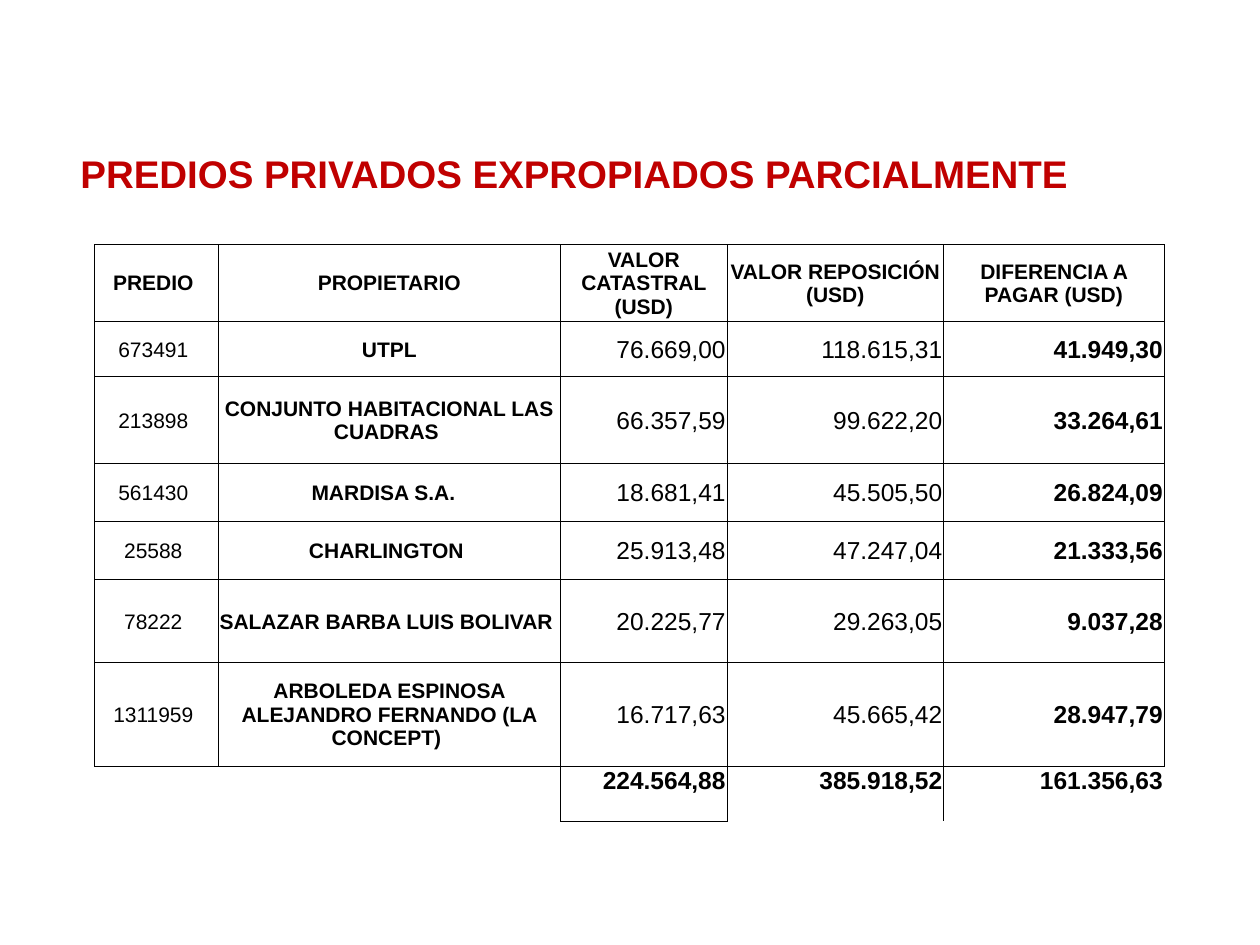
from dataclasses import dataclass

from lxml.etree import SubElement
from pptx import Presentation
from pptx.dml.color import RGBColor as RGB
from pptx.enum.text import MSO_ANCHOR as Anchor, PP_ALIGN as Align
from pptx.oxml.ns import qn
from pptx.util import Inches, Pt


@dataclass(frozen=True)
class Theme:
    font: str = "Arial"
    title: RGB = RGB(0xC0, 0, 0)
    text: RGB = RGB(0, 0, 0)
    cell: RGB = RGB(0xFF, 0xFF, 0xFF)
    border: str = "000000"
    title_size: Pt = Pt(22)
    label_size: Pt = Pt(12)
    amount_size: Pt = Pt(14)
    border_width: Pt = Pt(0.5)


theme = Theme()
PLAIN_STYLE = "{2D5ABB26-0587-4C30-8999-92F81FD0307C}"  # no style, no grid


def set_font(p, size, bold, color):
    p.font.name, p.font.size, p.font.bold = theme.font, size, bold
    p.font.color.rgb = color


def add_borders(cell, sides):
    tc_pr = cell._tc.get_or_add_tcPr()
    for i, side in enumerate(sides):
        ln = SubElement(tc_pr, qn(f"a:ln{side}"), w=str(theme.border_width))
        fill = SubElement(ln, qn("a:solidFill"))
        SubElement(fill, qn("a:srgbClr"), val=theme.border)
        tc_pr.insert(i, ln)


prs = Presentation()
prs.slide_width, prs.slide_height = Inches(10), Inches(7.5)
s = prs.slides.add_slide(prs.slide_layouts[6])

# Title
box = s.shapes.add_textbox(Inches(0.54), Inches(1.09), Inches(8.42), Inches(0.62))
tf = box.text_frame
tf.word_wrap = True
tf.vertical_anchor = Anchor.MIDDLE
p = tf.paragraphs[0]
p.text = "PREDIOS PRIVADOS EXPROPIADOS PARCIALMENTE"
p.line_spacing = 0.9
set_font(p, theme.title_size, True, theme.title)

# Table contents: header, properties, totals
rows = [
    ("PREDIO ", "PROPIETARIO", "VALOR CATASTRAL (USD)", "VALOR REPOSICIÓN (USD)",
     "DIFERENCIA A PAGAR (USD)"),
    ("673491 ", "UTPL", "76.669,00", "118.615,31", "41.949,30"),
    ("213898 ", "CONJUNTO HABITACIONAL LAS CUADRAS ", "66.357,59", "99.622,20", "33.264,61"),
    ("561430 ", "MARDISA S.A.  ", "18.681,41", "45.505,50", "26.824,09"),
    ("25588 ", "CHARLINGTON ", "25.913,48", "47.247,04", "21.333,56"),
    ("78222 ", "SALAZAR BARBA LUIS BOLIVAR ", "20.225,77", "29.263,05", "9.037,28"),
    ("1311959 ", "ARBOLEDA ESPINOSA ALEJANDRO FERNANDO (LA CONCEPT) ", "16.717,63",
     "45.665,42", "28.947,79"),
    ("", "", "224.564,88", "385.918,52", "161.356,63"),
]
col_widths = [0.98, 2.72, 1.32, 1.72, 1.75]
row_heights = [0.57, 0.44, 0.69, 0.46, 0.46, 0.66, 0.82, 0.44]
HEADER, TOTALS = 0, len(rows) - 1
OWNER, CADASTRAL, DIFFERENCE = 1, 2, 4

# Table grid
frame = s.shapes.add_table(len(rows), len(col_widths), Inches(0.75), Inches(1.94),
                           Inches(sum(col_widths)), Inches(sum(row_heights)))
table = frame.table
table.first_row = table.horz_banding = False
table._tbl.tblPr.find(qn("a:tableStyleId")).text = PLAIN_STYLE
for column, width in zip(table.columns, col_widths):
    column.width = Inches(width)
for row, height in zip(table.rows, row_heights):
    row.height = Inches(height)

# Cells
for r, values in enumerate(rows):
    for c, value in enumerate(values):
        cell = table.cell(r, c)
        cell.margin_left = cell.margin_right = cell.margin_top = Inches(0.01)
        cell.margin_bottom = 0
        cell.vertical_anchor = Anchor.TOP if r == TOTALS else Anchor.MIDDLE
        if c <= CADASTRAL and r != TOTALS:
            cell.fill.solid()
            cell.fill.fore_color.rgb = theme.cell
        else:
            cell.fill.background()

        is_amount = r != HEADER and c >= CADASTRAL
        p = cell.text_frame.paragraphs[0]
        p.text = value
        p.alignment = Align.RIGHT if is_amount else Align.CENTER
        set_font(p, theme.amount_size if is_amount else theme.label_size,
                 r in (HEADER, TOTALS) or c in (OWNER, DIFFERENCE), theme.text)

        # Only the cadastral total is boxed in the last row
        if r != TOTALS or c == CADASTRAL:
            sides = "LRTB"
        else:
            sides = {CADASTRAL - 1: "RT", CADASTRAL + 1: "LT"}.get(c, "T")
        add_borders(cell, sides)

prs.save("out.pptx")
